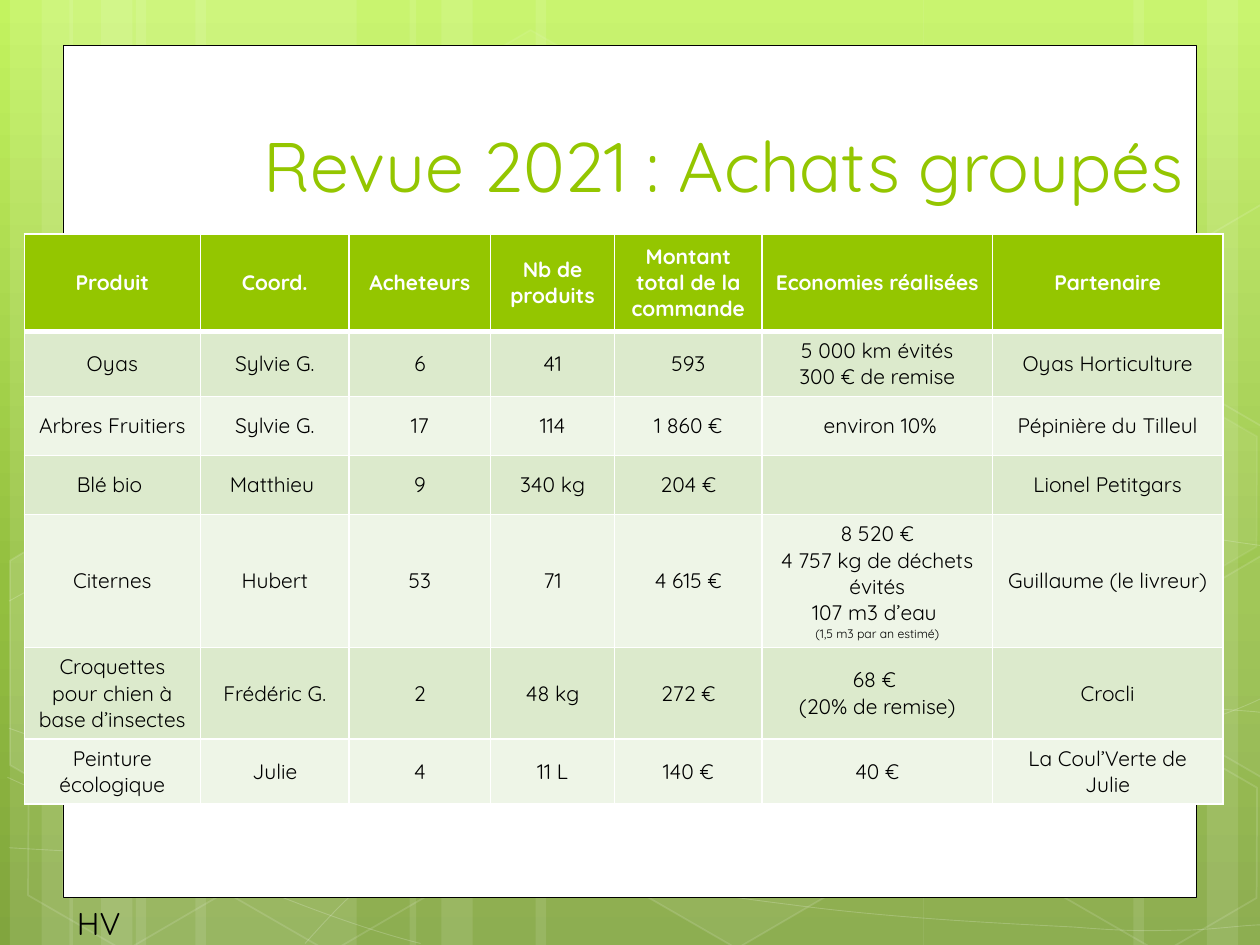
from copy import deepcopy
from dataclasses import dataclass
from math import cos, radians, sin

from lxml.etree import SubElement
from pptx import Presentation
from pptx.dml.color import RGBColor
from pptx.enum.shapes import MSO_SHAPE
from pptx.enum.text import MSO_ANCHOR, MSO_AUTO_SIZE, PP_ALIGN
from pptx.oxml import parse_xml
from pptx.oxml.ns import nsdecls, qn
from pptx.util import Cm, Pt


@dataclass(frozen=True)
class Theme:
    font: str = "Quicksand"
    green: str = "94C600"
    white: str = "FFFFFF"
    black: str = "000000"
    bands: tuple = ("DCEACC", "EEF5E7")
    gradient: tuple = ((0, "C3F35F"), (0.62, "93BF3F"), (1, "81A53E"))
    title_size: float = 40
    footer_size: float = 18
    table_size: float = 12
    note_size: float = 7


THEME = Theme()
WIDTH, HEIGHT = 25.4, 19.05
TILT = 30

# Each stripe group: outer edge, direction, width of its widest stripe
STRIPE_GROUPS = [(0.2, 1, 4.45), (1.4, 1, 4.45), (25.6, -1, 4.45), (8.26, 1, 7.82)]

# Each curve: start point, then two control points and an end point per segment
CURVES = [
    [(0.18, 17.09), (1.55, 17.17), (2.92, 17.25), (4.83, 17.22),
     (6.73, 17.2), (9.09, 17.15), (11.63, 16.89), (14.17, 16.64), (17.78, 16.15),
     (20.12, 15.67), (22.43, 15.19), (24.82, 14.43), (25.58, 14)],
    [(0.18, 12.12), (0.91, 11.71), (1.65, 11.33), (3.07, 10.95),
     (4.52, 10.57), (6.58, 10.01), (8.81, 9.83), (11.07, 9.65), (13.82, 9.63),
     (16.61, 9.83), (19.41, 10.03), (24.05, 10.82), (25.58, 11.02)],
    [(0.15, 15.67), (3.23, 17.07), (6.27, 18.47), (8.48, 19.02)],
    [(0.18, 14.68), (0.97, 14.96), (1.78, 15.24), (3.25, 15.65),
     (4.72, 16.03), (6.93, 16.66), (9.07, 17.09), (11.18, 17.53), (13.84, 17.98),
     (15.95, 18.24), (18.06, 18.52), (20.32, 18.62), (21.67, 18.69),
     (22.99, 18.8), (23.34, 18.75), (24, 18.75), (24.66, 18.72), (25.12, 18.64),
     (25.58, 18.64)],
    [(6.15, 19.02), (6.6, 18.52), (7.06, 18.01), (7.67, 17.55),
     (8.28, 17.09), (9.14, 16.59), (9.86, 16.23), (10.57, 15.88), (11, 15.72),
     (11.94, 15.47), (12.88, 15.22), (14.55, 14.86), (15.44, 14.68),
     (16.36, 14.5), (16.48, 14.5), (17.27, 14.45), (18.06, 14.38), (19.3, 14.3),
     (20.17, 14.27), (21.06, 14.25), (22.5, 14.27), (22.5, 14.27),
     (22.5, 14.27), (24.21, 14.27), (24.21, 14.27), (24.66, 14.3), (25.1, 14.33),
     (25.32, 14.35), (25.55, 14.38), (25.48, 14.35), (25.55, 14.38)],
]

# Left, top, fill opacity, line opacity (percent)
HEXAGONS = [
    (8.48, 0.91, 4, 8), (12.62, 14.96, 6, 12), (0.28, 15.01, 0, 12),
    (0.36, 7.92, 7, 8), (4.42, 15.04, 0, 12), (19.13, 11.51, 10, 12),
    (21.18, 15.06, 0, 12), (21.18, 7.98, 7, 8),
]

# Corners as seen on the slide, centre of the tilted frame, fill opacity
LEFT_CUT = [(0.2, 11.3), (0.48, 11.13), (2.44, 12.24), (2.41, 14.48), (0.51, 15.6), (0.2, 15.42)]
RIGHT_CUT = [(23.52, 12.32), (25.43, 11.2), (25.63, 11.33), (25.63, 15.57), (25.45, 15.67), (23.52, 14.55)]
CUT_HEXAGONS = [
    (LEFT_CUT, (0.91, 13.59), 10), (RIGHT_CUT, (25.02, 13.21), 4),
    ([(x, y - 7.08) for x, y in RIGHT_CUT], (25.02, 6.13), 0),
]

COLUMN_WIDTHS = [3.55, 3, 2.85, 2.5, 2.97, 4.65, 4.64]
HEADER_HEIGHT, ROW_HEIGHT = 1.96, 1.19
TABLE_ROWS = [
    ["Produit", "Coord.", "Acheteurs", "Nb de produits", "Montant total de la commande",
     "Economies réalisées", "Partenaire"],
    ["Oyas", "Sylvie G.", "6", "41", "593", "5 000 km évités\n300 € de remise", "Oyas Horticulture"],
    ["Arbres Fruitiers", "Sylvie G.", "17", "114", "1 860 €", " environ 10%", "Pépinière du Tilleul"],
    ["Blé bio ", "Matthieu ", "9", "340 kg", "204 €", "", "Lionel Petitgars"],
    ["Citernes", "Hubert", "53", "71", "4 615 €",
     "8 520 €\n4 757 kg de déchets évités\n107 m3 d’eau ", "Guillaume (le livreur)"],
    ["Croquettes pour chien à base d’insectes", "Frédéric G.", "2", "48 kg", "272 €",
     "68 € \n(20% de remise)", "Crocli"],
    ["Peinture écologique", "Julie", "4", "11 L", "140 €", "40 €", "La Coul’Verte de Julie"],
]
NOTES = {(4, 5): "(1,5 m3 par an estimé)"}


def put_text(frame, text, size, color, bold=False, align=PP_ALIGN.LEFT, note=""):
    """Write one paragraph per line, then an optional small note."""
    lines = [(line, size) for line in text.split("\n") if line]
    if note:
        lines.append((note, THEME.note_size))
    for index, (line, line_size) in enumerate(lines):
        paragraph = frame.add_paragraph() if index else frame.paragraphs[0]
        paragraph.alignment = align
        run = paragraph.add_run()
        run.text = line
        run.font.name, run.font.size, run.font.bold = THEME.font, Pt(line_size), bold
        run.font.color.rgb = RGBColor.from_string(color)


def set_opacity(parent, percent):
    color = parent.find(qn("a:solidFill"))[0]
    SubElement(color, qn("a:alpha")).set("val", str(percent * 1000))


def paint(shape, fill=0, line=0, line_width=1):
    """Give a shape white fill and line of the given opacities; 0 means none."""
    shape.shadow.inherit = False
    properties = shape.element.spPr
    if fill:
        shape.fill.solid()
        shape.fill.fore_color.rgb = RGBColor.from_string(THEME.white)
        if fill < 100:
            set_opacity(properties, fill)
    else:
        shape.fill.background()
    if line:
        shape.line.width = Pt(line_width)
        shape.line.color.rgb = RGBColor.from_string(THEME.white)
        set_opacity(properties.find(qn("a:ln")), line)
    else:
        shape.line.fill.background()


def add_outline(slide, points, close):
    points = [(Cm(x), Cm(y)) for x, y in points]
    builder = slide.shapes.build_freeform(*points[0])
    builder.add_line_segments(points[1:], close=close)
    return builder.convert_to_shape()


def add_curve(slide, nodes):
    """Draw the nodes as an outline, then join every three into a Bézier segment."""
    shape = add_outline(slide, nodes, False)
    segments = list(shape.element.iter(qn("a:lnTo")))
    outline = segments[0].getparent()
    for first in range(0, len(segments), 3):
        bezier = SubElement(outline, qn("a:cubicBezTo"))
        for segment in segments[first:first + 3]:
            bezier.append(segment[0])
            outline.remove(segment)
    return shape


def add_tilted_outline(slide, points, center):
    cosine, sine = cos(radians(TILT)), sin(radians(TILT))
    offsets = [(x - center[0], y - center[1]) for x, y in points]
    upright = [(center[0] + x * cosine + y * sine, center[1] - x * sine + y * cosine)
               for x, y in offsets]
    shape = add_outline(slide, upright, True)
    shape.rotation = TILT
    return shape


def fill_background(slide):
    fill = slide.background.fill
    fill.gradient()
    fill.gradient_angle = 270
    last_stop = list(slide.element.iter(qn("a:gs")))[-1]
    last_stop.addnext(deepcopy(last_stop))
    for stop, (position, color) in zip(fill.gradient_stops, THEME.gradient):
        stop.position = position
        stop.color.rgb = RGBColor.from_string(color)


def add_backdrop(slide, height):
    for edge, direction, widest in STRIPE_GROUPS:
        for offset, width in ((2.54, widest), (0, 1.27), (0.64, 2.11)):
            left = edge + offset if direction > 0 else edge - offset - width
            stripe = slide.shapes.add_shape(MSO_SHAPE.RECTANGLE, Cm(left), 0, Cm(width), Cm(height))
            paint(stripe, fill=10)
    for nodes in CURVES:
        paint(add_curve(slide, nodes), line=20, line_width=0.5)
    for left, top, fill, line in HEXAGONS:
        hexagon = slide.shapes.add_shape(MSO_SHAPE.HEXAGON, Cm(left), Cm(top), Cm(4.45), Cm(3.86))
        hexagon.adjustments[0] = 0.285
        hexagon.rotation = TILT
        paint(hexagon, fill, line)
    for points, center, fill in CUT_HEXAGONS:
        paint(add_tilted_outline(slide, points, center), fill, 12)


def add_panel(slide, left, top, width, height):
    panel = slide.shapes.add_shape(MSO_SHAPE.RECTANGLE, Cm(left), Cm(top), Cm(width), Cm(height))
    paint(panel, fill=100)
    panel.line.width = Pt(0.5)
    panel.line.color.rgb = RGBColor.from_string(THEME.black)


def place_title(slide, text, left, top, width, height):
    title = slide.shapes.title
    title.element.getparent().append(title.element)  # in front of the panel
    title.left, title.top, title.width, title.height = Cm(left), Cm(top), Cm(width), Cm(height)
    title.text_frame.vertical_anchor = MSO_ANCHOR.BOTTOM
    title.text_frame.auto_size = MSO_AUTO_SIZE.NONE
    put_text(title.text_frame, text, THEME.title_size, THEME.green, align=PP_ALIGN.RIGHT)


def set_borders(cell, top=1, bottom=1):
    properties = cell._tc.get_or_add_tcPr()
    for index, (side, width) in enumerate((("L", 1), ("R", 1), ("T", top), ("B", bottom))):
        properties.insert(index, parse_xml(
            f'<a:ln{side} {nsdecls("a")} w="{Pt(width)}"><a:solidFill>'
            f'<a:srgbClr val="{THEME.white}"/></a:solidFill></a:ln{side}>'))


def add_purchases_table(slide, left, top):
    height = HEADER_HEIGHT + ROW_HEIGHT * (len(TABLE_ROWS) - 1)
    table = slide.shapes.add_table(len(TABLE_ROWS), len(COLUMN_WIDTHS), Cm(left), Cm(top),
                                   Cm(sum(COLUMN_WIDTHS)), Cm(height)).table
    for column, width in zip(table.columns, COLUMN_WIDTHS):
        column.width = Cm(width)
    for row, texts in enumerate(TABLE_ROWS):
        header = row == 0
        table.rows[row].height = Cm(HEADER_HEIGHT if header else ROW_HEIGHT)
        for column, text in enumerate(texts):
            cell = table.cell(row, column)
            cell.vertical_anchor = MSO_ANCHOR.MIDDLE
            cell.fill.solid()
            cell.fill.fore_color.rgb = RGBColor.from_string(
                THEME.green if header else THEME.bands[(row - 1) % 2])
            set_borders(cell, top=3 if row == 1 else 1, bottom=3 if header else 1)
            put_text(cell.text_frame, text, THEME.table_size,
                     THEME.white if header else THEME.black, bold=header,
                     align=PP_ALIGN.CENTER, note=NOTES.get((row, column), ""))


def add_initials(slide, text, left, top, width, height):
    box = slide.shapes.add_textbox(Cm(left), Cm(top), Cm(width), Cm(height))
    box.text_frame.word_wrap = True
    put_text(box.text_frame, text, THEME.footer_size, THEME.black)


def main():
    presentation = Presentation()
    presentation.slide_width, presentation.slide_height = Cm(WIDTH), Cm(HEIGHT)
    slide = presentation.slides.add_slide(presentation.slide_layouts[5])
    fill_background(slide)
    add_backdrop(slide, HEIGHT)
    add_panel(slide, 1.27, 0.91, 22.86, 17.19)
    place_title(slide, "Revue 2021 : Achats groupés", 3.1, 1.12, 21, 3.18)
    add_purchases_table(slide, 0.49, 4.72)
    add_initials(slide, "HV", 1.3, 18.1, 2.11, 1.02)
    presentation.save("out.pptx")


if __name__ == "__main__":
    main()
